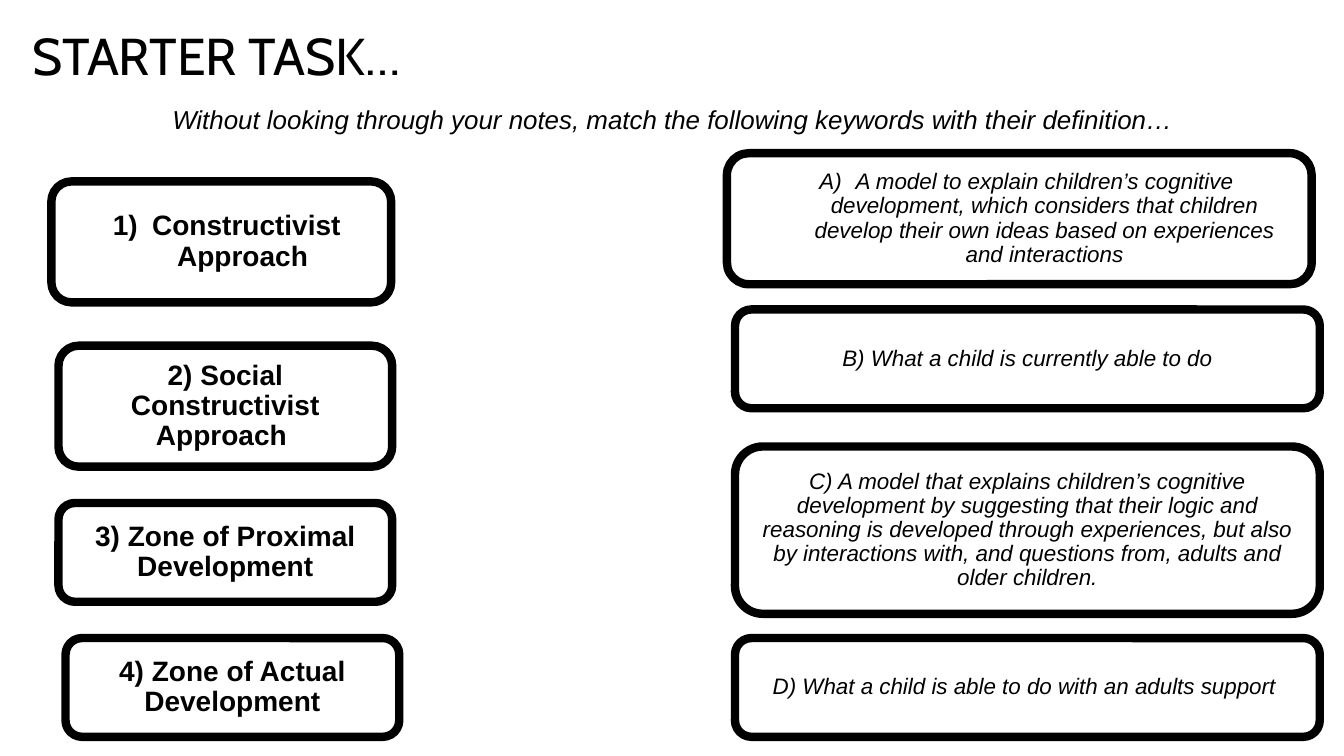
from lxml.etree import SubElement
from pptx import Presentation
from pptx.dml.color import RGBColor
from pptx.enum.shapes import MSO_SHAPE
from pptx.enum.text import MSO_ANCHOR, PP_ALIGN
from pptx.oxml.ns import qn
from pptx.util import Inches, Pt

COLORS = {"ink": "000000", "paper": "FFFFFF"}

# Top, left, width, height, text, number style and hanging indent
TERMS = [
    (1.8, 0.51, 3.37, 1.2, "Constructivist Approach ", "arabicParenR", 0.39),
    (3.43, 0.58, 3.31, 1.2, "2) Social Constructivist Approach ", None, 0),
    (4.99, 0.58, 3.31, 0.98, "3) Zone of Proximal Development", None, 0),
    (6.33, 0.65, 3.31, 0.98, "4) Zone of Actual Development", None, 0),
]
MEANINGS = [
    (1.52, 7.21, 5.8, 1.3,
     "A model to explain children’s cognitive development, which considers "
     "that children develop their own ideas based on experiences and "
     "interactions", "alphaUcParenR", 0.36),
    (3.07, 7.29, 5.8, 0.98, "B) What a child is currently able to do", None, 0),
    (4.43, 7.29, 5.8, 1.66,
     "C) A model that explains children’s cognitive development by suggesting "
     "that their logic and reasoning is developed through experiences, but "
     "also by interactions with, and questions from, adults and older "
     "children.", None, 0),
    (6.33, 7.29, 5.8, 0.98,
     "D) What a child is able to do with an adults support ", None, 0),
]


def color(name):
    return RGBColor.from_string(COLORS[name])


def number(para, style, hang):
    """Turn a paragraph into a numbered item with a hanging indent."""
    props = para._p.get_or_add_pPr()
    props.set("marL", str(Inches(0.5)))
    props.set("indent", str(-Inches(hang)))
    tint = SubElement(props, qn("a:buClr"))
    SubElement(tint, qn("a:srgbClr"), val=COLORS["ink"])
    SubElement(props, qn("a:buAutoNum"), type=style)


def write(shape, text, size, align=PP_ALIGN.CENTER, anchor=MSO_ANCHOR.TOP,
          pad=0.05, face="Arial", bold=False, italic=False,
          style=None, hang=0):
    frame = shape.text_frame
    frame.word_wrap = True
    frame.vertical_anchor = anchor
    frame.margin_left = frame.margin_right = Inches(0.1)
    frame.margin_top = frame.margin_bottom = Inches(pad)
    frame.text = text
    para = frame.paragraphs[0]
    para.alignment = align
    para.line_spacing = 0.9
    if style:
        number(para, style, hang)
    font = para.runs[0].font
    font.name, font.size = face, Pt(size)
    font.bold, font.italic = bold, italic
    font.color.rgb = color("ink")


def add_text(slide, left, top, width, height, text, size, **look):
    box = slide.shapes.add_textbox(
        Inches(left), Inches(top), Inches(width), Inches(height))
    write(box, text, size, **look)


def add_card(slide, item, size, **look):
    top, left, width, height, text, style, hang = item
    card = slide.shapes.add_shape(
        MSO_SHAPE.FLOWCHART_ALTERNATE_PROCESS,
        Inches(left), Inches(top), Inches(width), Inches(height))
    card.shadow.inherit = False
    card.fill.solid()
    card.fill.fore_color.rgb = color("paper")
    card.line.color.rgb = color("ink")
    card.line.width = Pt(6)
    write(card, text, size, anchor=MSO_ANCHOR.MIDDLE, pad=0.1,
          style=style, hang=hang, **look)


def main():
    deck = Presentation()
    deck.slide_width, deck.slide_height = Inches(13.33), Inches(7.5)
    slide = deck.slides.add_slide(deck.slide_layouts[6])

    # Heading and task
    add_text(slide, 0.22, 0.17, 4.02, 0.74, "STARTER TASK…", 37,
             align=PP_ALIGN.LEFT, anchor=MSO_ANCHOR.BOTTOM, face="Cabin")
    add_text(slide, 1.54, 1.01, 10.25, 0.52,
             "Without looking through your notes, match the following "
             "keywords with their definition…", 18.5, italic=True)

    # Keywords on the left, definitions on the right
    for term in TERMS:
        add_card(slide, term, 20, bold=True)
    for meaning in MEANINGS:
        add_card(slide, meaning, 16, italic=True)

    deck.save("out.pptx")


if __name__ == "__main__":
    main()
